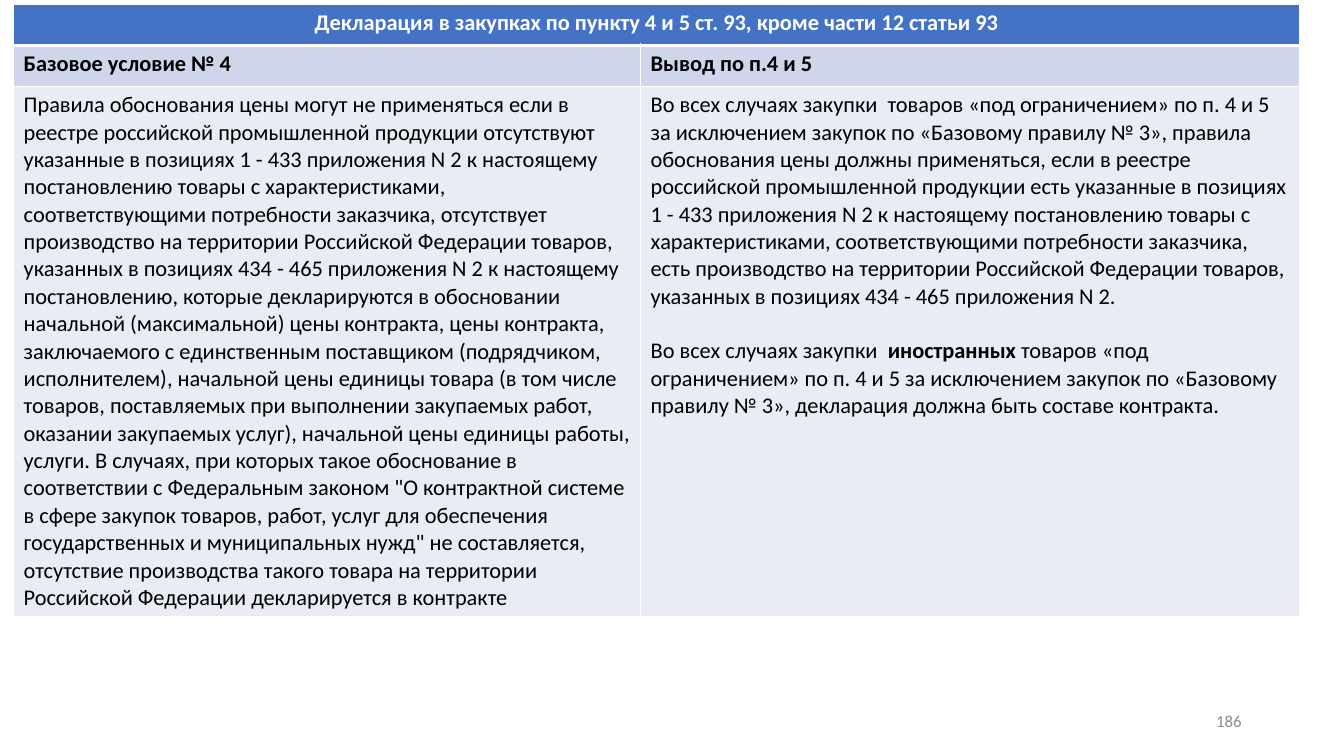
from dataclasses import dataclass

from lxml import etree
from pptx import Presentation
from pptx.dml.color import RGBColor
from pptx.enum import text
from pptx.oxml import ns
from pptx.table import _Cell
from pptx.text.text import _Paragraph
from pptx.util import Pt


@dataclass(frozen=True)
class Theme:
    """Colours, font and type sizes of the slide."""
    font: str = "Calibri"
    body_size: int = 16
    number_size: int = 12
    white: str = "FFFFFF"
    black: str = "000000"
    grey: str = "8C8C8C"
    title_fill: str = "4472C4"
    heading_fill: str = "CFD5EA"
    body_fill: str = "E9EBF5"


@dataclass(frozen=True)
class Phrase:
    """A stretch of text with one weight."""
    wording: str
    bold: bool = False


@dataclass(frozen=True)
class Entry:
    """The paragraphs and look of one table cell."""
    row: int
    column: int
    paragraphs: list[list[Phrase]]
    fill: str
    color: str = Theme.black
    align: text.PP_ALIGN = text.PP_ALIGN.LEFT


THEME = Theme()
PARAGRAPH_GAP = 19.5
COLUMN_WIDTHS = (447.84, 470.88)
ROW_HEIGHTS = (29.2, 29.2, 372)
BORDER, TITLE_RULE = 1, 3

CONDITION = [
    Phrase(
        "Правила обоснования цены могут не применяться если в реестре российской "
        "промышленной продукции отсутствуют указанные в позициях 1 - 433 приложения "
        "N 2 к настоящему постановлению товары с характеристиками, соответствующими "
        "потребности заказчика, отсутствует производство на территории Российской "
        "Федерации товаров, указанных в позициях 434 - 465 приложения N 2 к "
        "настоящему постановлению, "),
    Phrase(
        "которые декларируются в обосновании начальной (максимальной) "
        "цены контракта, цены контракта, заключаемого с единственным поставщиком "
        "(подрядчиком, исполнителем), начальной цены единицы товара (в том числе "
        "товаров, поставляемых при выполнении закупаемых работ, оказании закупаемых "
        "услуг), начальной цены единицы работы, услуги. "),
    Phrase(
        "В случаях, при которых такое обоснование в соответствии с Федеральным "
        "законом \"О контрактной системе в сфере закупок товаров, работ, услуг для "
        "обеспечения государственных и муниципальных нужд\" не составляется, "
        "отсутствие производства такого товара на территории Российской Федерации "
        "декларируется в контракте"),
]
PRICE_CONCLUSION = [Phrase(
    "Во всех случаях закупки  товаров «под ограничением» по п. 4 и 5 за исключением "
    "закупок по «Базовому правилу № 3», правила обоснования цены должны "
    "применяться, если в реестре российской промышленной продукции есть указанные в "
    "позициях 1 - 433 приложения N 2 к настоящему постановлению товары с "
    "характеристиками, соответствующими потребности заказчика, есть производство на "
    "территории Российской Федерации товаров, указанных в позициях 434 - 465 "
    "приложения N 2.")]
FOREIGN_CONCLUSION = [
    Phrase("Во всех случаях закупки  "),
    Phrase("иностранных", True),
    Phrase(" товаров «под ограничением» по п. 4 и 5 за исключением закупок по "
           "«Базовому правилу № 3», декларация должна быть составе контракта."),
]
ENTRIES = [
    Entry(0, 0, [[Phrase("Декларация в закупках по пункту 4 и 5 ст. 93, "
                         "кроме части 12 статьи 93", True)]],
          THEME.title_fill, THEME.white, text.PP_ALIGN.CENTER),
    Entry(1, 0, [[Phrase("Базовое условие № 4", True)]], THEME.heading_fill),
    Entry(1, 1, [[Phrase("Вывод по п.4 и 5", True)]], THEME.heading_fill),
    Entry(2, 0, [CONDITION], THEME.body_fill),
    Entry(2, 1, [PRICE_CONCLUSION, FOREIGN_CONCLUSION], THEME.body_fill),
]


def add_phrase(paragraph: _Paragraph, phrase: Phrase, size: int, color: str) -> None:
    """Append one styled run to a paragraph."""
    run = paragraph.add_run()
    run.text = phrase.wording
    run.font.name = THEME.font
    run.font.size = Pt(size)
    run.font.bold = phrase.bold
    run.font.color.rgb = RGBColor.from_string(color)


def set_borders(cell: _Cell, row: int) -> None:
    """Draw white cell borders with a heavier rule below the title row."""
    widths = {
        "L": BORDER,
        "R": BORDER,
        "T": TITLE_RULE if row == 1 else BORDER,
        "B": TITLE_RULE if row == 0 else BORDER,
    }
    properties = cell._tc.get_or_add_tcPr()
    for position, (side, width) in enumerate(widths.items()):
        line = etree.Element(ns.qn(f"a:ln{side}"), w=str(Pt(width)))
        fill = etree.SubElement(line, ns.qn("a:solidFill"))
        etree.SubElement(fill, ns.qn("a:srgbClr"), val=THEME.white)
        properties.insert(position, line)


def fill_cell(cell: _Cell, entry: Entry) -> None:
    """Write an entry into its table cell."""
    cell.fill.solid()
    cell.fill.fore_color.rgb = RGBColor.from_string(entry.fill)
    for index, phrases in enumerate(entry.paragraphs):
        frame = cell.text_frame
        paragraph = frame.add_paragraph() if index else frame.paragraphs[0]
        paragraph.alignment = entry.align
        if index:
            paragraph.space_before = Pt(PARAGRAPH_GAP)
        for phrase in phrases:
            add_phrase(paragraph, phrase, THEME.body_size, entry.color)


def main() -> None:
    """Build the declaration slide and save it."""
    deck = Presentation()
    deck.slide_width, deck.slide_height = Pt(960), Pt(540)
    slide = deck.slides.add_slide(deck.slide_layouts[6])

    declaration = slide.shapes.add_table(
        len(ROW_HEIGHTS), len(COLUMN_WIDTHS), Pt(9.72), Pt(3.2),
        Pt(sum(COLUMN_WIDTHS)), Pt(sum(ROW_HEIGHTS))).table
    for column, width in zip(declaration.columns, COLUMN_WIDTHS):
        column.width = Pt(width)
    for index, height in enumerate(ROW_HEIGHTS):
        declaration.rows[index].height = Pt(height)
        for cell in declaration.rows[index].cells:
            set_borders(cell, index)
    declaration.cell(0, 0).merge(declaration.cell(0, 1))
    for entry in ENTRIES:
        fill_cell(declaration.cell(entry.row, entry.column), entry)

    page_number = slide.shapes.add_textbox(
        Pt(678), Pt(500.5), Pt(216), Pt(28.75)).text_frame
    page_number.word_wrap = True
    page_number.vertical_anchor = text.MSO_ANCHOR.MIDDLE
    page_number.paragraphs[0].alignment = text.PP_ALIGN.RIGHT
    add_phrase(page_number.paragraphs[0], Phrase("186"), THEME.number_size, THEME.grey)

    deck.save("out.pptx")


if __name__ == "__main__":
    main()
